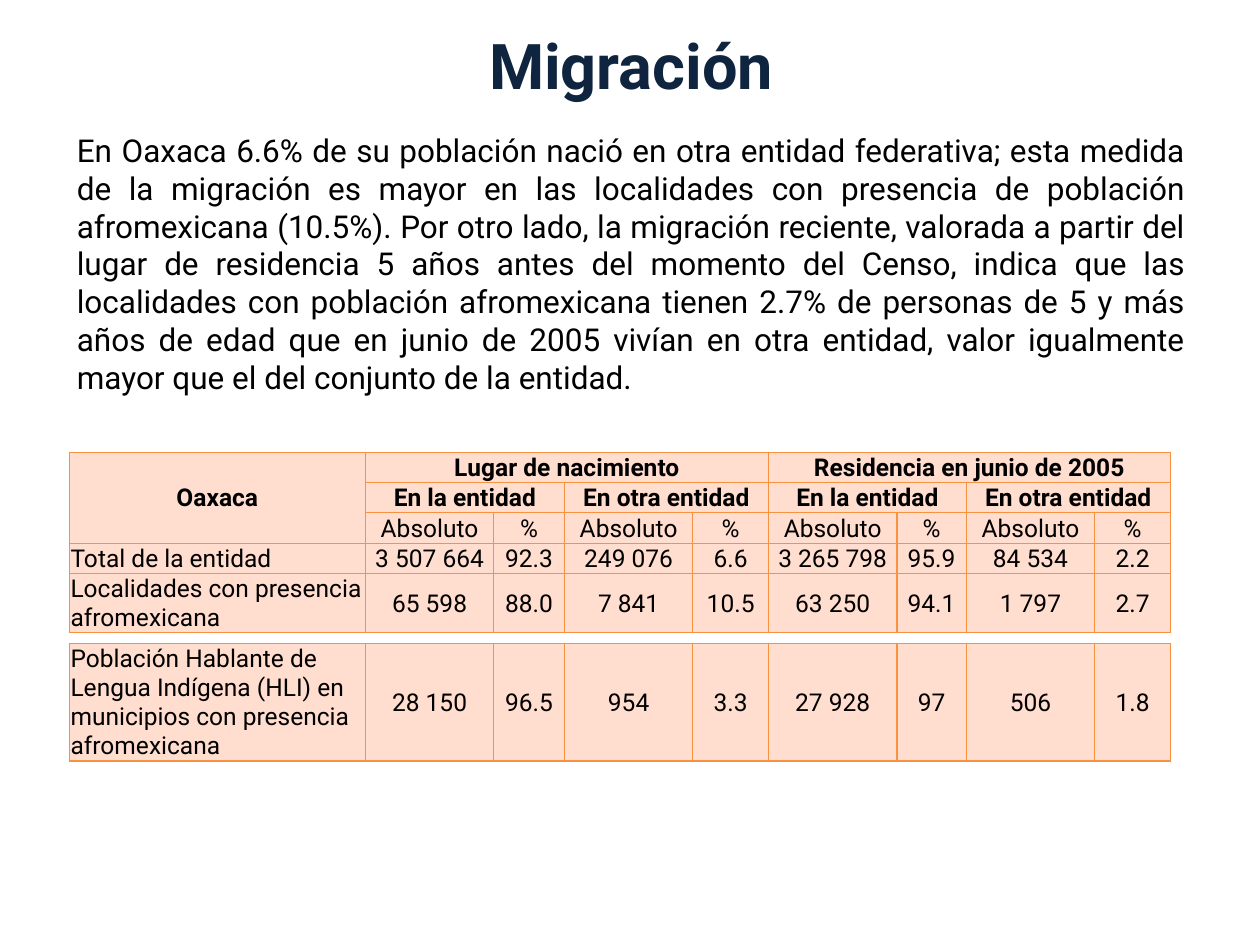
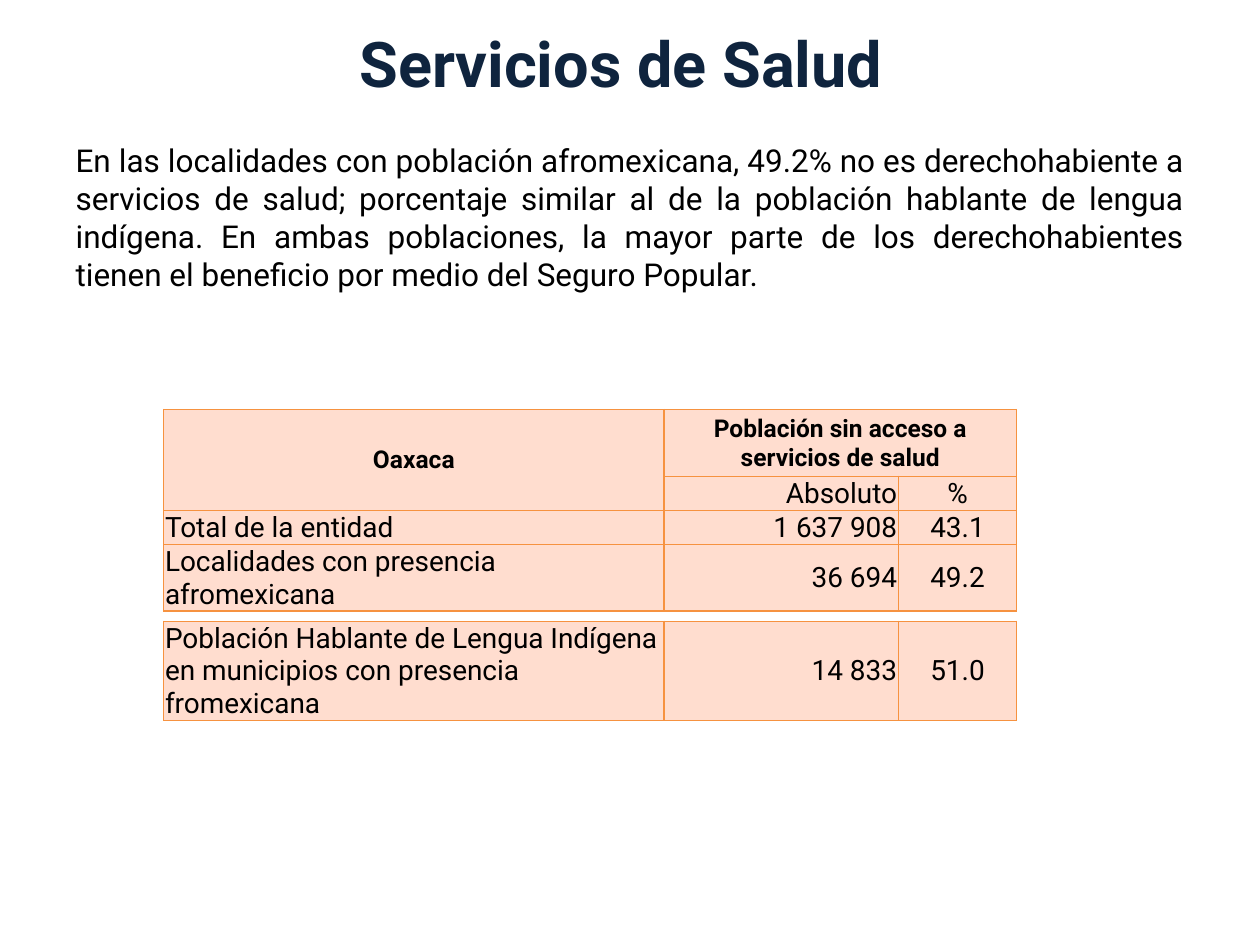
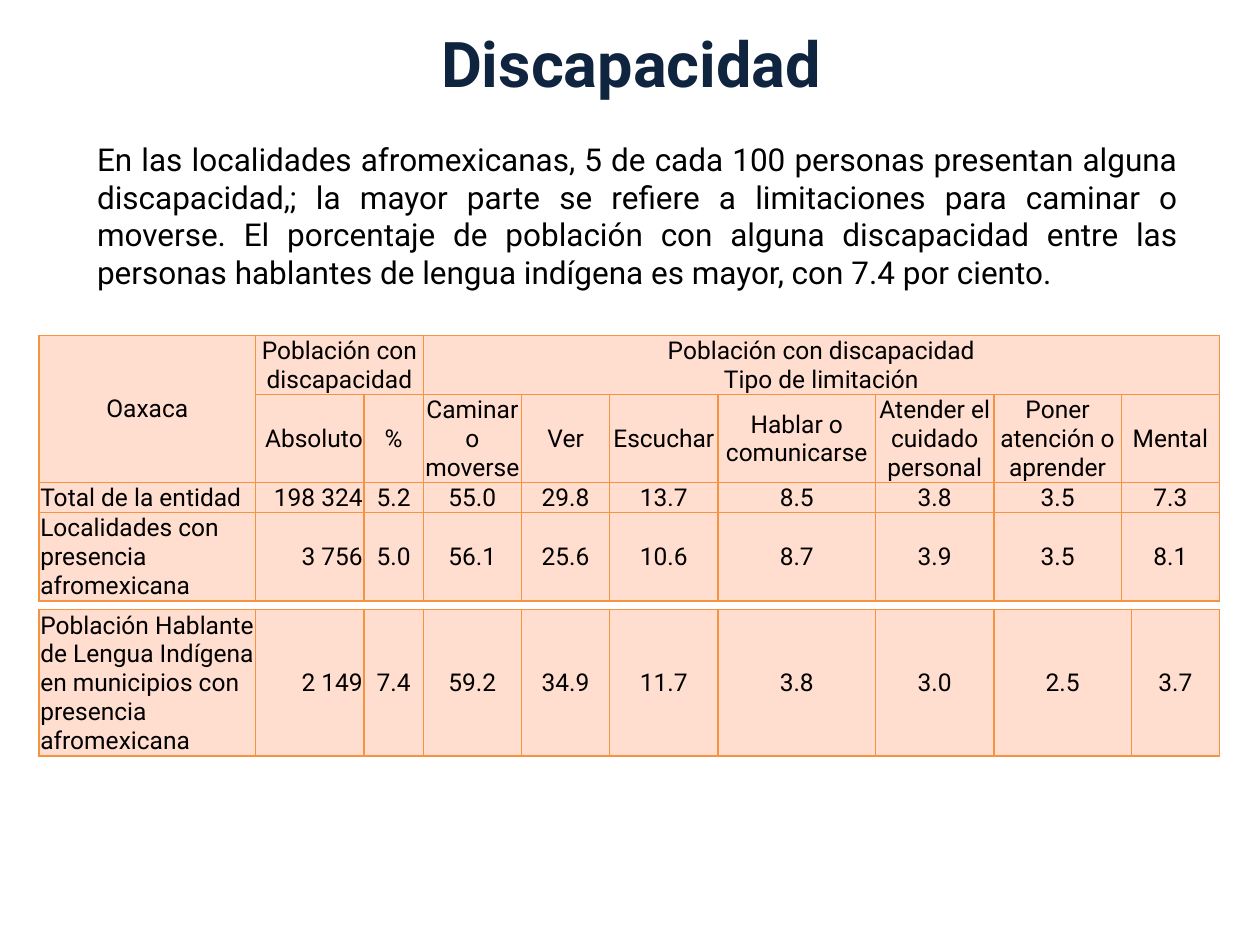
"""Build three slides on migration, health services and disability in Oaxaca."""
from copy import deepcopy
from itertools import takewhile

from lxml.etree import SubElement
from pptx import Presentation
from pptx.dml.color import RGBColor
from pptx.enum.text import MSO_ANCHOR, PP_ALIGN
from pptx.oxml.ns import qn
from pptx.util import Inches, Pt

FONT = "Roboto"
NAVY = RGBColor(0x0F, 0x24, 0x3E)
BLACK = RGBColor(0x00, 0x00, 0x00)
PEACH = RGBColor(0xFF, 0xDD, 0xCF)
ORANGE = RGBColor(0xF6, 0x92, 0x40)
ALIGNMENTS = {"l": PP_ALIGN.LEFT, "c": PP_ALIGN.CENTER, "r": PP_ALIGN.RIGHT, "j": PP_ALIGN.JUSTIFY}

TOTAL = "Total de la entidad"
LOCALITIES = "Localidades con presencia afromexicana"
MIGRATION_COLUMNS = [2.35, 1.02, 0.56, 1.02, 0.6, 1.02, 0.55, 1.02, 0.6]
HEALTH_COLUMNS = [3.97, 1.86, 0.94]
DISABILITY_COLUMNS = [1.72, 0.86, 0.47, 0.78, 0.7, 0.86, 1.25, 0.94]

# None continues the merged header on its left, or above it in the first column.
SLIDES = [
    {
        "title": "Migración",
        "title_box": (0.51, 0.05, 9, 0.92),
        "body": "En Oaxaca 6.6% de su población nació en otra entidad federativa; esta medida de la "
                "migración es mayor en las localidades con presencia de población afromexicana (10.5%). "
                "Por otro lado, la migración reciente, valorada a partir del lugar de residencia 5 años "
                "antes del momento del Censo, indica que las localidades con población afromexicana "
                "tienen 2.7% de personas de 5 y más años de edad que en junio de 2005 vivían en otra "
                "entidad, valor igualmente mayor que el del conjunto de la entidad.",
        "body_box": (0.51, 0.99, 9, 2.36),
        "size": 14, "bold_headers": True, "alignment": "lcccccccc",
        "tables": [
            {"position": (0.55, 3.59), "columns": MIGRATION_COLUMNS,
             "heights": [0.24, 0.24, 0.24, 0.24, 0.47],
             "rows": [
                 ["Oaxaca", "Lugar de nacimiento", None, None, None,
                  "Residencia en junio de 2005", None, None, None],
                 [None] + ["En la entidad", None, "En otra entidad", None] * 2,
                 [None] + ["Absoluto", "%"] * 4,
                 [TOTAL, "3 507 664", "92.3", "249 076", "6.6", "3 265 798", "95.9", "84 534", "2.2"],
                 [LOCALITIES, "65 598", "88.0", "7 841", "10.5", "63 250", "94.1", "1 797", "2.7"],
             ]},
            {"position": (0.55, 5.11), "columns": MIGRATION_COLUMNS, "heights": [0.93],
             "rows": [["Población Hablante de Lengua Indígena (HLI) en municipios con presencia afromexicana",
                       "28 150", "96.5", "954", "3.3", "27 928", "97", "506", "1.8"]]},
        ],
    },
    {
        "title": "Servicios de Salud",
        "title_box": (0.43, 0, 9, 0.99),
        "body": "En las localidades con población afromexicana, 49.2% no es derechohabiente a servicios "
                "de salud; porcentaje similar al de la población hablante de lengua indígena. En ambas "
                "poblaciones, la mayor parte de los derechohabientes tienen el beneficio por medio del "
                "Seguro Popular.",
        "body_box": (0.5, 1.07, 9, 1.42),
        "size": 16, "bold_headers": True, "alignment": "lrc",
        "tables": [
            {"position": (1.3, 4.93), "columns": HEALTH_COLUMNS, "heights": [0.78],
             "rows": [["Población Hablante de Lengua Indígena en municipios con presencia fromexicana",
                       "14 833", "51.0"]]},
            {"position": (1.3, 3.25), "columns": HEALTH_COLUMNS, "heights": [0.53, 0.27, 0.27, 0.53],
             "rows": [
                 ["Oaxaca", "Población sin acceso a servicios de salud", None],
                 [None, "Absoluto", "%"],
                 [TOTAL, "1 637 908", "43.1"],
                 [LOCALITIES, "36 694", "49.2"],
             ]},
        ],
    },
    {
        "title": "Discapacidad",
        "title_box": (0.51, 0, 9, 0.99),
        "body": "En las localidades afromexicanas, 5 de cada 100 personas presentan alguna "
                "discapacidad,; la mayor parte se refiere a limitaciones para caminar o moverse. El "
                "porcentaje de población con alguna discapacidad entre las personas hablantes de lengua "
                "indígena es mayor, con 7.4 por ciento.",
        "body_box": (0.67, 1.06, 8.78, 1.43),
        "size": 14, "bold_headers": False, "alignment": "lrcccccccc",
        "tables": [
            {"position": (0.31, 2.66), "columns": DISABILITY_COLUMNS + [1.01, 0.78],
             "heights": [0.47, 0.7, 0.24, 0.7],
             "rows": [
                 ["Oaxaca", "Población con discapacidad", None,
                  "Población con discapacidad\vTipo de limitación"] + [None] * 6,
                 [None, "Absoluto", "%", "Caminar o moverse", "Ver", "Escuchar", "Hablar o comunicarse",
                  "Atender el cuidado personal", "Poner atención o aprender", "Mental"],
                 [TOTAL, "198 324", "5.2", "55.0", "29.8", "13.7", "8.5", "3.8", "3.5", "7.3"],
                 [LOCALITIES, "3 756", "5.0", "56.1", "25.6", "10.6", "8.7", "3.9", "3.5", "8.1"],
             ]},
            {"position": (0.31, 4.84), "columns": DISABILITY_COLUMNS + [1.09, 0.7], "heights": [1.16],
             "rows": [["Población Hablante de Lengua Indígena en municipios con presencia afromexicana",
                       "2 149", "7.4", "59.2", "34.9", "11.7", "3.8", "3.0", "2.5", "3.7"]]},
        ],
    },
]


def write_text(text_frame, text, size=18, color=BLACK, bold=False, alignment="l"):
    """Write one formatted paragraph without a bullet."""
    paragraph = text_frame.paragraphs[0]
    paragraph.text = text
    paragraph.alignment = ALIGNMENTS[alignment]
    paragraph.space_before = Pt(0)
    properties = paragraph._p.get_or_add_pPr()
    properties.set("marL", "0")
    properties.set("indent", "0")
    SubElement(properties, qn("a:buNone"))
    for run in paragraph.runs:
        run.font.name = FONT
        run.font.size = Pt(size)
        run.font.bold = bold
        run.font.color.rgb = color
    for line_break in paragraph._p.findall(qn("a:br")):
        line_break.append(deepcopy(paragraph.runs[0]._r.rPr))


def fill_placeholder(placeholder, box, text, **text_format):
    """Move a placeholder and write its text."""
    placeholder.left, placeholder.top, placeholder.width, placeholder.height = map(Inches, box)
    write_text(placeholder.text_frame, text, **text_format)


def style_cell(cell):
    """Give a cell its insets, orange borders and peach fill."""
    cell.vertical_anchor = MSO_ANCHOR.MIDDLE
    cell.margin_left = cell.margin_right = cell.margin_top = Inches(0.01)
    cell.margin_bottom = 0
    properties = cell._tc.get_or_add_tcPr()
    for side in ("lnL", "lnR", "lnT", "lnB"):
        line = SubElement(properties, qn(f"a:{side}"), w=str(Pt(0.75)))
        SubElement(SubElement(line, qn("a:solidFill")), qn("a:srgbClr"), val=str(ORANGE))
    cell.fill.solid()
    cell.fill.fore_color.rgb = PEACH


def count_merged(following):
    """Count the None entries that directly follow a cell."""
    return len(list(takewhile(lambda entry: entry is None, following)))


def add_data_table(slide, position, columns, heights, rows, size, bold_headers, alignment):
    """Add a table whose None entries merge into their header cell."""
    left, top = position
    frame = slide.shapes.add_table(len(rows), len(columns), Inches(left), Inches(top),
                                   Inches(sum(columns)), Inches(sum(heights)))
    table = frame.table
    table.first_row = table.horz_banding = False
    for column, width in zip(table.columns, columns):
        column.width = Inches(width)
    for row, height in zip(table.rows, heights):
        row.height = Inches(height)
    for row_index, row in enumerate(rows):
        for column_index, text in enumerate(row):
            cell = table.cell(row_index, column_index)
            style_cell(cell)
            if text is None:
                continue
            across = count_merged(row[column_index + 1:])
            below = count_merged(r[0] for r in rows[row_index + 1:]) if column_index == 0 else 0
            if across or below:
                cell.merge(table.cell(row_index + below, column_index + across))
                write_text(cell.text_frame, text, size=14, bold=bold_headers, alignment="c")
            else:
                write_text(cell.text_frame, text, size=size, alignment=alignment[column_index])


def main():
    """Build and save the presentation."""
    presentation = Presentation()
    presentation.slide_width, presentation.slide_height = Inches(10), Inches(7.5)
    for content in SLIDES:
        slide = presentation.slides.add_slide(presentation.slide_layouts[1])
        fill_placeholder(slide.shapes.title, content["title_box"], content["title"],
                         size=36, color=NAVY, bold=True, alignment="c")
        fill_placeholder(slide.placeholders[1], content["body_box"], content["body"], alignment="j")
        for table in content["tables"]:
            add_data_table(slide, **table, size=content["size"],
                           bold_headers=content["bold_headers"], alignment=content["alignment"])
    presentation.save("out.pptx")


if __name__ == "__main__":
    main()
